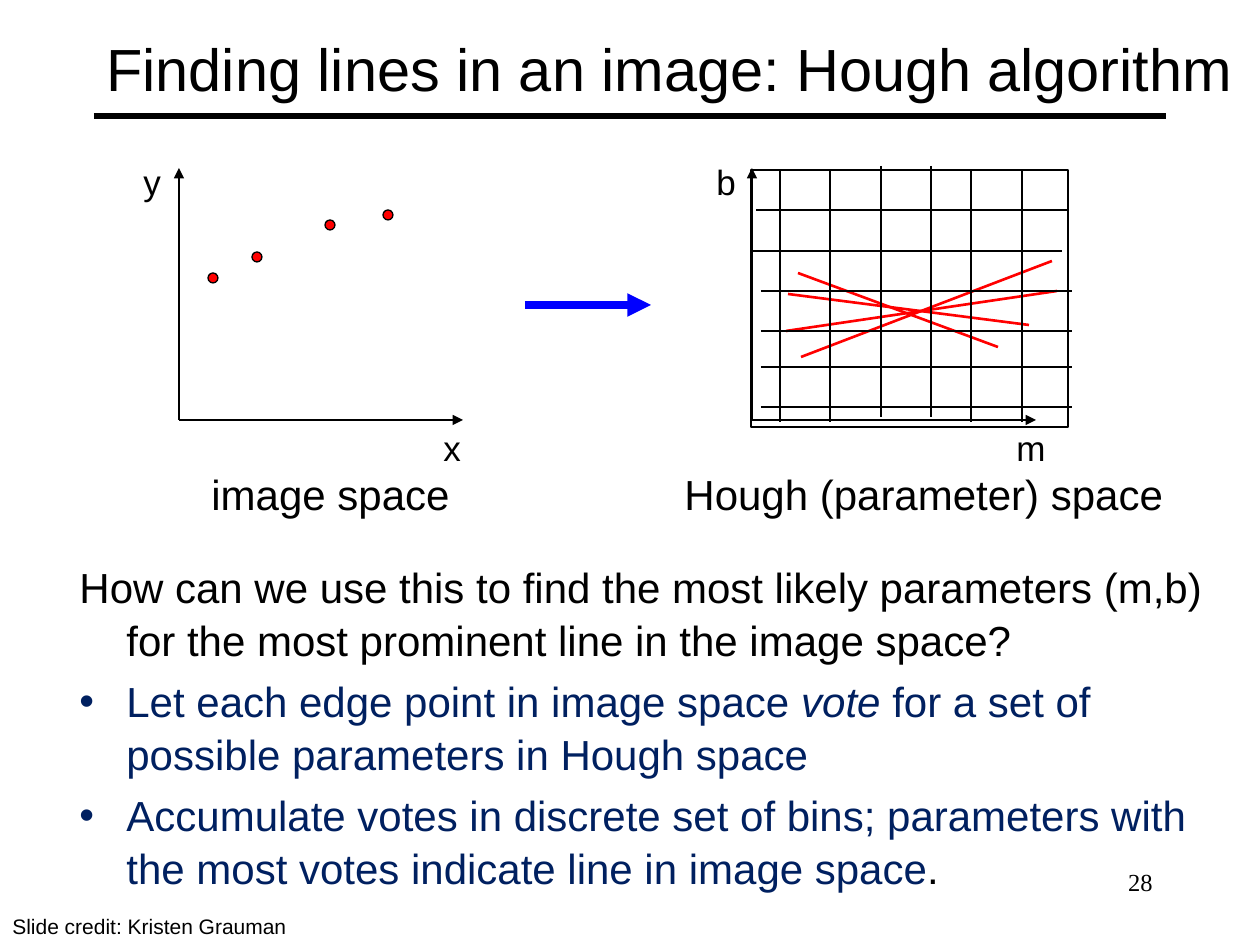
from lxml.etree import SubElement
from pptx import Presentation
from pptx.dml.color import RGBColor
from pptx.enum.shapes import MSO_CONNECTOR, MSO_SHAPE
from pptx.enum.text import MSO_ANCHOR, MSO_AUTO_SIZE, PP_ALIGN
from pptx.oxml.ns import qn
from pptx.util import Pt

EMU_PER_PX = 914400 / 126
BLACK, RED, BLUE, NAVY = "000000", "FF0000", "0000FF", "002060"


def px(length):
    return round(length * EMU_PER_PX)


def color(value):
    return RGBColor.from_string(value)


class SlideBuilder:
    """Holds the text style and the shapes that new elements are added to."""

    font = "Arial"

    def __init__(self, page):
        self.page = page
        self.shapes = page.shapes

    def start_group(self):
        self.shapes = self.page.shapes.add_group_shape().shapes

    def end_group(self):
        self.shapes = self.page.shapes

    def line(self, start, end, stroke=BLACK, width=0.75, arrow=False):
        line = self.shapes.add_connector(
            MSO_CONNECTOR.STRAIGHT, *map(px, start + end))
        line.line.color.rgb = color(stroke)
        line.line.width = Pt(width)
        properties = line._element.spPr
        if arrow:
            SubElement(properties.find(qn("a:ln")), qn("a:tailEnd"), type="triangle")
        SubElement(properties, qn("a:effectLst"))

    def shape(self, kind, left, top, width, height, fill=None):
        shape = self.shapes.add_shape(kind, *map(px, (left, top, width, height)))
        shape.shadow.inherit = False
        if fill:
            shape.fill.solid()
            shape.fill.fore_color.rgb = color(fill)
        else:
            shape.fill.background()
        shape.line.color.rgb = color(BLACK)
        shape.line.width = Pt(0.75)

    def style(self, span, size, ink=BLACK, font=None):
        span.font.size = Pt(size)
        span.font.name = font or self.font
        span.font.color.rgb = color(ink)

    def frame(self, left, top, width, height, wrap=True):
        box = self.shapes.add_textbox(*map(px, (left, top, width, height)))
        box.text_frame.word_wrap = wrap
        return box.text_frame

    def text(self, words, place, size, wrap=True, font=None,
             align=PP_ALIGN.LEFT, anchor=MSO_ANCHOR.TOP):
        frame = self.frame(*place, wrap=wrap)
        frame.text = words
        frame.vertical_anchor = anchor
        if not wrap:
            frame.auto_size = MSO_AUTO_SIZE.SHAPE_TO_FIT_TEXT
        para = frame.paragraphs[0]
        para.alignment = align
        self.style(para.runs[0], size, font=font)

    def body(self, paragraphs, place, size):
        """Each paragraph is (bulleted, [(words, ink, italic), ...])."""
        frame = self.frame(*place)
        for index, (bulleted, spans) in enumerate(paragraphs):
            para = frame.add_paragraph() if index else frame.paragraphs[0]
            para.space_before = Pt(size * 0.2)
            para.line_spacing = 1.05
            properties = para._p.get_or_add_pPr()
            properties.set("marL", str(px(47)))
            properties.set("indent", str(px(-47)))
            if bulleted:
                SubElement(properties, qn("a:buFont"), typeface=self.font)
                SubElement(properties, qn("a:buChar"), char="•")
            for words, ink, italic in spans:
                span = para.add_run()
                span.text = words
                self.style(span, size, ink)
                span.font.italic = italic

    def axes(self, left, across, up):
        """Draw two arrows from a shared origin, with their labels."""
        top, bottom, length = 168, 420, 284
        self.line((left, bottom), (left, top), width=1, arrow=True)
        self.line((left, bottom), (left + length, bottom), width=1, arrow=True)
        for words, x, y, width in ((across, left + 252, bottom, 54 if across == "m" else 43),
                                   (up, left - 48, 154, 44)):
            self.text(words, (x, y, width, 54), 20, wrap=False)


def main():
    deck = Presentation()
    deck.slide_width, deck.slide_height = px(1260), px(945)
    page = deck.slides.add_slide(deck.slide_layouts[6])
    builder = SlideBuilder(page)

    builder.line((94, 116), (1166, 116), width=3)
    builder.text("Finding lines in an image: Hough algorithm",
                 (94, 10, 1166, 116), 34, anchor=MSO_ANCHOR.MIDDLE)
    builder.body([
        (False, [("How can we use this to find the most likely parameters (m,b) "
                  "for the most prominent line in the image space?", BLACK, False)]),
        (True, [("Let each edge point in image space ", NAVY, False),
                ("vote ", NAVY, True),
                ("for a set of possible parameters in Hough space", NAVY, False)]),
        (True, [("Accumulate votes in discrete set of bins; parameters with "
                 "the most votes indicate line in image space", NAVY, False),
                (".", BLACK, False)]),
    ], (67, 553, 1152, 262), 24)

    builder.axes(179, "x", "y")
    builder.axes(752, "m", "b")
    builder.text("image space", (199, 462, 263, 63), 24, wrap=False)
    builder.text("Hough (parameter) space", (672, 462, 509, 64), 24, wrap=False)
    builder.line((525, 305), (651, 305), BLUE, 4.5, arrow=True)

    for left, top in ((208, 273), (252, 252), (325, 220), (383, 210)):
        builder.shape(MSO_SHAPE.OVAL, left, top, 10, 10, RED)
    for start, end in (((798, 273), (998, 347)), ((788, 294), (1029, 325)),
                       ((801, 357), (1052, 261)), ((786, 331), (1057, 291))):
        builder.line(start, end, RED, 1.5)

    builder.start_group()
    builder.shape(MSO_SHAPE.RECTANGLE, 751, 170, 317, 257)
    for left, y in ((756, 210), (751, 251), (761, 291),
                    (761, 331), (761, 367), (761, 407)):
        builder.line((left, y), (left + 311, y))
    for x, top in ((780, 171), (830, 171), (881, 166),
                   (931, 166), (971, 171), (1022, 171)):
        builder.line((x, top), (x, top + 251))
    builder.end_group()

    builder.text("28", (903, 861, 262, 63), 14, font="Times New Roman",
                 align=PP_ALIGN.RIGHT)
    builder.text("Slide credit: Kristen Grauman", (0, 907, 819, 38), 12)
    deck.save("out.pptx")


if __name__ == "__main__":
    main()
